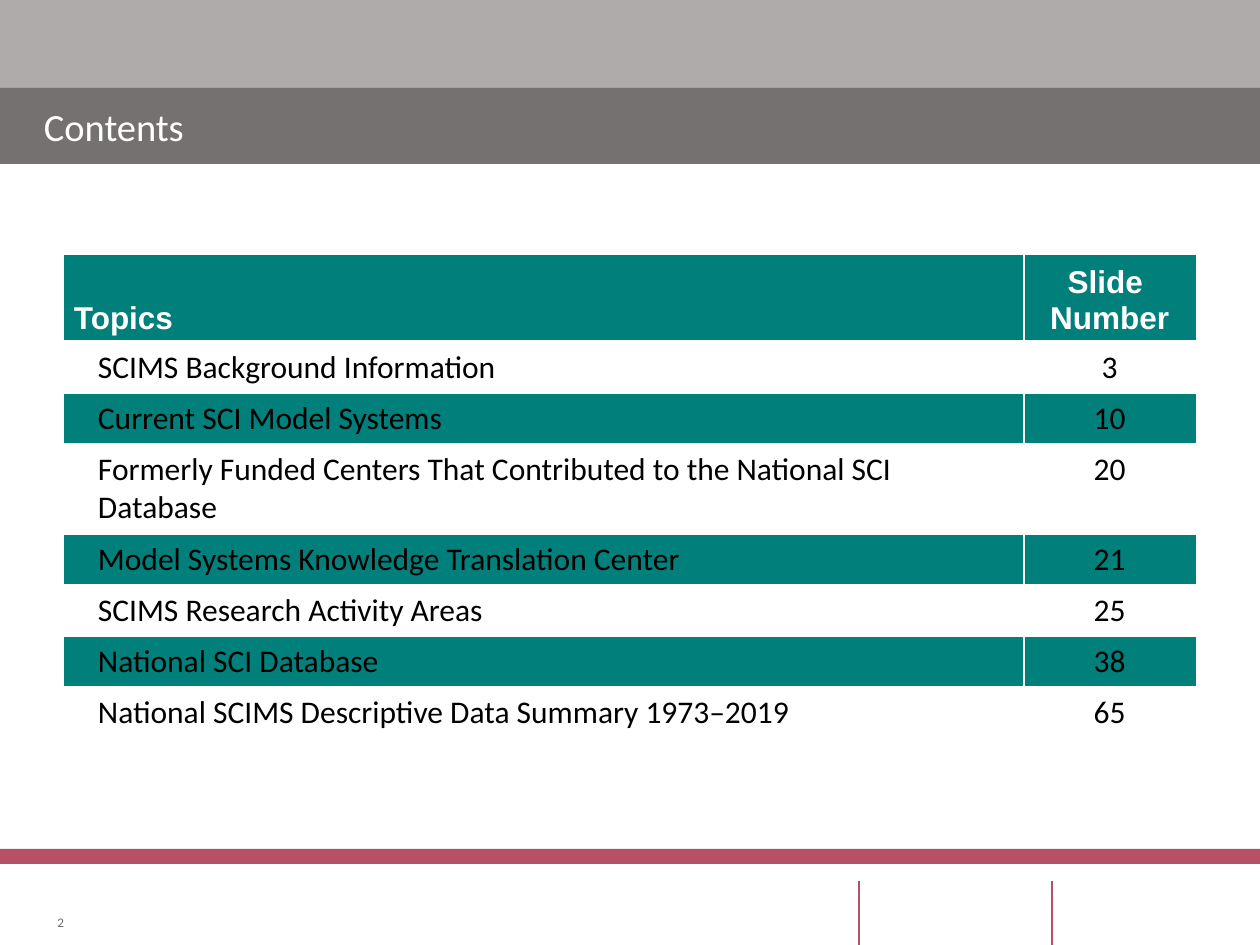
from lxml import etree
from pptx import Presentation, util as u
from pptx.dml.color import RGBColor
from pptx.enum import shapes, text
from pptx.oxml.ns import qn

WHITE, TEAL, ROSE = "FFFFFF", "007F7B", "B65065"
TINT = 31  # percent opacity of banded rows
BANDS = [(0, 89, "AFABAB"), (88, 76, "767171"), (849, 15, ROSE)]  # top, height, fill
RULES = [859, 1052]
HEAD = ("Topics", "Slide \nNumber")
TOPICS = [
    ("SCIMS Background Information", "3"),
    ("Current SCI Model Systems", "10"),
    ("Formerly Funded Centers That Contributed to the National SCI Database", "20"),
    ("Model Systems Knowledge Translation Center", "21"),
    ("SCIMS Research Activity Areas", "25"),
    ("National SCI Database", "38"),
    ("National SCIMS Descriptive Data Summary 1973–2019", "65"),
]
COLS = [961, 173]
HEAD_H, ROW_H, LONG_H, LONG = 88, 51, 90, 60  # LONG: letters that fit on one line
TITLE = dict(name="Calibri", size=u.Pt(22), color=WHITE)
TOP = dict(name="Arial", size=u.Pt(18), bold=True, color=WHITE)
BODY = dict(name="Calibri", size=u.Pt(18), bold=False, color="000000")
FOOT = dict(name="Calibri", size=u.Pt(7.5), color="6F6A6A")
LEFT, MID, RIGHT = text.PP_ALIGN.LEFT, text.PP_ALIGN.CENTER, text.PP_ALIGN.RIGHT


def px(n):
    return round(n * 914400 / 126)


def rgb(code):
    return RGBColor.from_string(code)


def style(para, look, align):
    para.alignment = align
    for key, val in look.items():
        if key == "color":
            para.font.color.rgb = rgb(val)
        else:
            setattr(para.font, key, val)


def label(slide, words, box, look, align, **frame):
    tf = slide.shapes.add_textbox(*map(px, box)).text_frame
    for key, val in frame.items():
        setattr(tf, key, val)
    tf.margin_top = tf.margin_bottom = 0
    tf.text = words
    style(tf.paragraphs[0], look, align)


def edge(cell, side, pts):
    """Add a white cell border; call before the cell is filled."""
    line = etree.SubElement(cell._tc.get_or_add_tcPr(), qn("a:ln" + side), w=str(u.Pt(pts)))
    fill = etree.SubElement(line, qn("a:solidFill"))
    etree.SubElement(fill, qn("a:srgbClr"), val=WHITE)


def paint(cell, row):
    if row % 2:
        cell.fill.background()
        return
    cell.fill.solid()
    cell.fill.fore_color.rgb = rgb(TEAL)
    if row:
        tone = cell._tc.tcPr.find(".//" + qn("a:srgbClr"))
        etree.SubElement(tone, qn("a:alpha"), val=str(TINT * 1000))


def contents(slide):
    rows = [HEAD] + TOPICS
    highs = [HEAD_H] + [LONG_H if len(t) > LONG else ROW_H for t, _ in TOPICS]
    box = (63, 254, sum(COLS), sum(highs))
    table = slide.shapes.add_table(len(rows), len(COLS), *map(px, box)).table
    for col, wide in zip(table.columns, COLS):
        col.width = px(wide)
    for r, (pair, high) in enumerate(zip(rows, highs)):
        table.rows[r].height = px(high)
        for c, words in enumerate(pair):
            cell = table.cell(r, c)
            cell.text = words
            for para in cell.text_frame.paragraphs:
                style(para, BODY if r else TOP, MID if c else LEFT)
            cell.vertical_anchor = text.MSO_ANCHOR.TOP if r else text.MSO_ANCHOR.BOTTOM
            cell.margin_left = px(35 if r and not c else 11)
            for side in "LRTB":
                edge(cell, side, 3 if (r, side) in [(0, "B"), (1, "T")] else 1)
            paint(cell, r)


def main():
    deck = Presentation()
    deck.slide_width, deck.slide_height = px(1260), px(945)
    slide = deck.slides.add_slide(deck.slide_layouts[6])
    for top, high, fill in BANDS:
        band = slide.shapes.add_shape(shapes.MSO_SHAPE.RECTANGLE, 0, px(top), px(1260), px(high))
        band.shadow.inherit = False
        band.fill.solid()
        band.fill.fore_color.rgb = rgb(fill)
        band.line.fill.background()
    for x in RULES:
        rule = slide.shapes.add_connector(
            shapes.MSO_CONNECTOR.STRAIGHT, px(x), px(881), px(x), px(945))
        rule.line.color.rgb = rgb(ROSE)
        rule.line.width = u.Pt(1.5)
        etree.SubElement(rule._element.spPr, qn("a:effectLst"))
    label(slide, "Contents", (0, 88, 1260, 76), TITLE, LEFT, word_wrap=True,
          vertical_anchor=text.MSO_ANCHOR.MIDDLE, margin_left=px(44), margin_right=px(44))
    contents(slide)
    label(slide, "2", (48, 914, 16, 16), FOOT, RIGHT, word_wrap=False,
          vertical_anchor=text.MSO_ANCHOR.BOTTOM, margin_left=0, margin_right=0,
          auto_size=text.MSO_AUTO_SIZE.SHAPE_TO_FIT_TEXT)
    deck.save("out.pptx")


if __name__ == "__main__":
    main()
